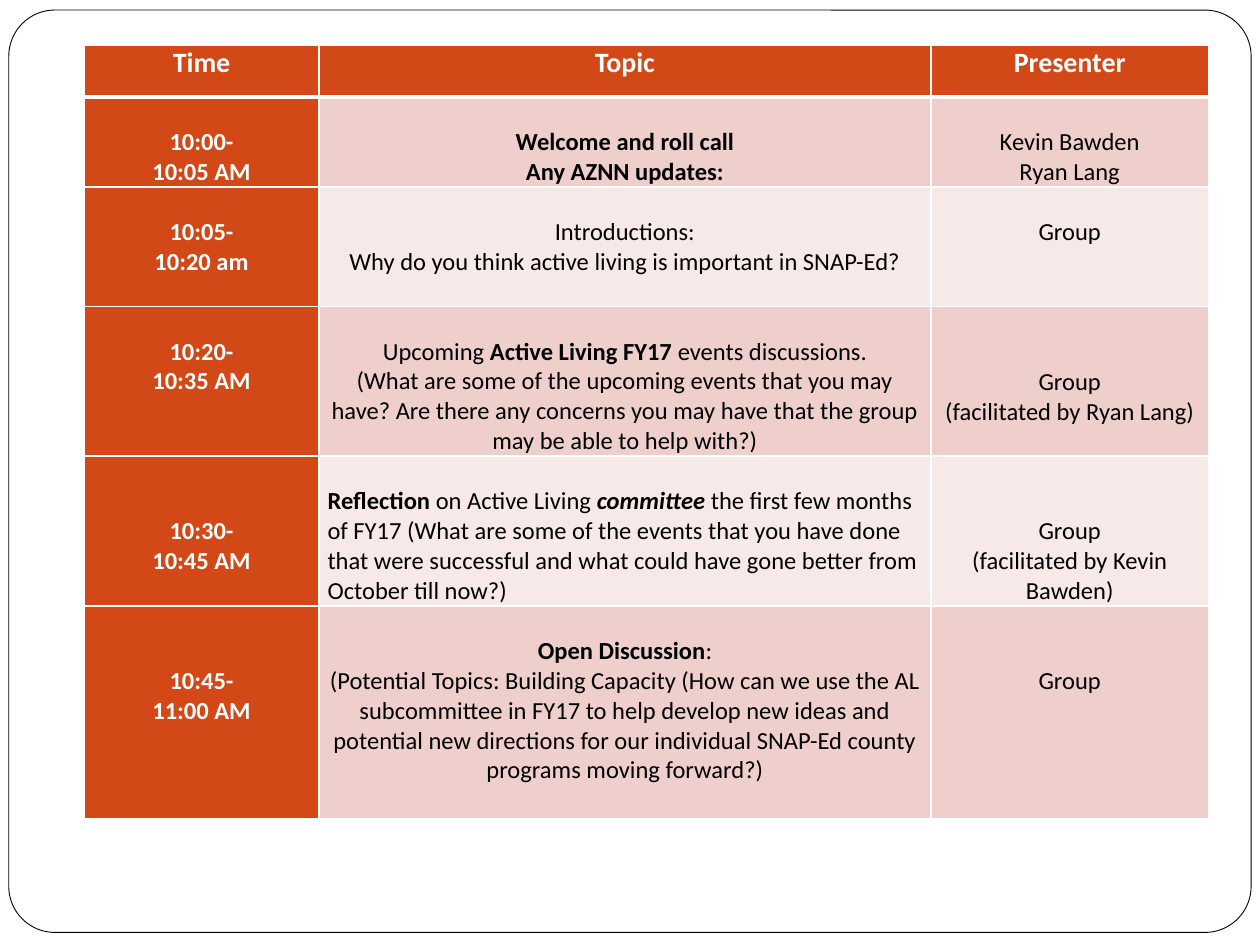
from dataclasses import dataclass

from lxml import etree
from pptx import Presentation, util as u
from pptx.dml.color import RGBColor
from pptx.enum import shapes, text
from pptx.oxml.ns import qn


@dataclass(frozen=True)
class Theme:
    font: str = "Calibri"
    head: float = 16
    body: float = 14
    white: str = "FFFFFF"
    black: str = "000000"
    rust: str = "D34817"
    bands: tuple[str, str] = ("EFCFCC", "F7E9E8")


@dataclass(frozen=True)
class Run:
    text: str
    bold: bool = False
    slant: bool = False


@dataclass(frozen=True)
class Cell:
    """Lines of runs, set down from the top by a number of text lines."""
    lines: tuple[tuple[Run, ...], ...]
    drop: int = 1
    left: bool = False


@dataclass(frozen=True)
class Row:
    height: float
    cells: tuple[Cell, Cell, Cell]


THEME = Theme()
LINE = 0.24
WIDTHS = (1.86, 4.86, 2.2)


def plain(*lines: str, drop: int = 1, bold: bool = False) -> Cell:
    return Cell(tuple((Run(line, bold),) for line in lines), drop)


def slot(start: str, end: str, drop: int = 1) -> Cell:
    return plain(f"{start}-", end, drop=drop, bold=True)


HEAD = Row(0.41, tuple(plain(name, drop=0, bold=True)
                       for name in ("Time", "Topic", "Presenter")))
AGENDA = (
    Row(0.71, (
        slot("10:00", "10:05 AM"),
        plain("Welcome and roll call", "Any AZNN updates:", bold=True),
        plain("Kevin Bawden", "Ryan Lang"))),
    Row(0.95, (
        slot("10:05", "10:20 am"),
        plain("Introductions:",
              "Why do you think active living is important in SNAP-Ed?"),
        plain("Group"))),
    Row(1.18, (
        slot("10:20", "10:35 AM"),
        Cell(((Run("Upcoming "), Run("Active Living FY17", True),
               Run(" events discussions.")),
              (Run("(What are some of the upcoming events that you may have? "
                   "Are there any concerns you may have that the group may be "
                   "able to help with?)"),))),
        plain("Group", "(facilitated by Ryan Lang)", drop=2))),
    Row(1.18, (
        slot("10:30", "10:45 AM", drop=2),
        Cell(((Run("Reflection ", True), Run("on Active Living "),
               Run("committee", True, True),
               Run(" the first few months of FY17 (What are some of the events "
                   "that you have done that were successful and what could "
                   "have gone better from October till now?)")),), left=True),
        plain("Group", "(facilitated by Kevin Bawden)", drop=2))),
    Row(1.69, (
        slot("10:45", "11:00 AM", drop=2),
        Cell(((Run("Open Discussion", True), Run(":")),
              (Run("(Potential Topics: Building Capacity (How can we use the AL "
                   "subcommittee in FY17 to help develop new ideas and "
                   "potential new directions for our individual SNAP-Ed county "
                   "programs moving forward?)"),))),
        plain("Group", drop=2))),
)


def rgb(code: str) -> RGBColor:
    return RGBColor.from_string(code)


def draw_frame(slide) -> None:
    frame = slide.shapes.add_shape(
        shapes.MSO_SHAPE.ROUNDED_RECTANGLE,
        u.Inches(0.07), u.Inches(0.08), u.Inches(9.86), u.Inches(7.32))
    frame.adjustments[0] = 0.05
    frame.shadow.inherit = False
    frame.fill.solid()
    frame.fill.fore_color.rgb = rgb(THEME.white)
    frame.line.color.rgb = rgb(THEME.black)
    frame.line.width = u.Pt(0.5)


def rule_cell(box, row: int) -> None:
    """Draw white borders, with a thick one under the header row."""
    props = box._tc.get_or_add_tcPr()
    thick = {0: "lnB", 1: "lnT"}.get(row)
    for side in ("lnL", "lnR", "lnT", "lnB"):
        width = u.Pt(3 if side == thick else 1)
        edge = etree.SubElement(props, qn(f"a:{side}"), w=str(int(width)))
        fill = etree.SubElement(edge, qn("a:solidFill"))
        etree.SubElement(fill, qn("a:srgbClr"), val=THEME.white)


def fill_cell(box, cell: Cell, row: int, col: int) -> None:
    key = row == 0 or col == 0
    rule_cell(box, row)
    box.fill.solid()
    box.fill.fore_color.rgb = rgb(THEME.rust if key else THEME.bands[(row - 1) % 2])
    box.margin_left = box.margin_right = u.Inches(0.07)
    box.margin_top, box.margin_bottom = u.Inches(cell.drop * LINE), 0
    frame = box.text_frame
    for n, line in enumerate(cell.lines):
        para = frame.add_paragraph() if n else frame.paragraphs[0]
        para.alignment = text.PP_ALIGN.LEFT if cell.left else text.PP_ALIGN.CENTER
        for item in line:
            run = para.add_run()
            run.text = item.text
            font = run.font
            font.name = THEME.font
            font.size = u.Pt(THEME.body if row else THEME.head)
            font.bold, font.italic = item.bold, item.slant
            font.color.rgb = rgb(THEME.white if key else THEME.black)


def draw_table(slide, rows: tuple[Row, ...]) -> None:
    table = slide.shapes.add_table(
        len(rows), len(WIDTHS), u.Inches(0.67), u.Inches(0.36),
        u.Inches(sum(WIDTHS)), u.Inches(sum(r.height for r in rows))).table
    table.first_col = True
    for col, width in zip(table.columns, WIDTHS):
        col.width = u.Inches(width)
    for r, row in enumerate(rows):
        table.rows[r].height = u.Inches(row.height)
        for c, cell in enumerate(row.cells):
            fill_cell(table.cell(r, c), cell, r, c)


def main() -> None:
    deck = Presentation()
    deck.slide_width, deck.slide_height = u.Inches(10), u.Inches(7.5)
    slide = deck.slides.add_slide(deck.slide_layouts[6])
    draw_frame(slide)
    draw_table(slide, (HEAD, *AGENDA))
    deck.save("out.pptx")


if __name__ == "__main__":
    main()
